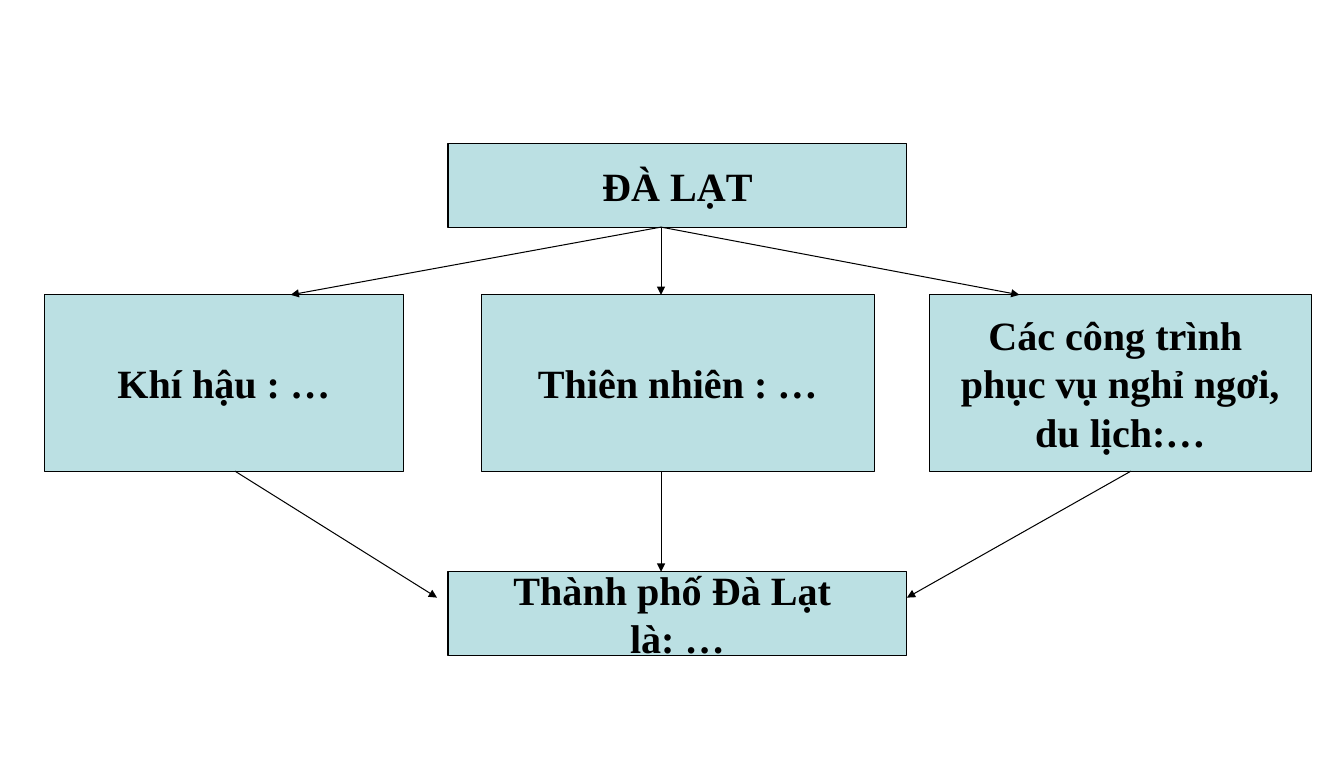
from lxml import etree
from pptx import Presentation
from pptx.dml.color import RGBColor
from pptx.enum.shapes import MSO_CONNECTOR, MSO_SHAPE
from pptx.enum.text import MSO_ANCHOR, PP_ALIGN
from pptx.oxml.ns import qn
from pptx.util import Inches, Pt

RECTANGLE = MSO_SHAPE.RECTANGLE
STRAIGHT = MSO_CONNECTOR.STRAIGHT
MIDDLE = MSO_ANCHOR.MIDDLE
CENTER = PP_ALIGN.CENTER

PALE_TEAL = RGBColor(0xBB, 0xE0, 0xE3)
BLACK = RGBColor(0, 0, 0)
LINE_WIDTH = Pt(0.75)

FRAME_FORMAT = {
    "word_wrap": False,
    "vertical_anchor": MIDDLE,
    "margin_left": Inches(0.12),
    "margin_right": Inches(0.12),
    "margin_top": Inches(0.06),
    "margin_bottom": Inches(0.06),
}
FONT_FORMAT = {"name": "Times New Roman", "size": Pt(29), "bold": True}

CITY_BOX = (4.5, 1.44, 4.61, 0.84)
FEATURE_BAND = (0.45, 2.96, 12.72, 1.77)
SUMMARY_BOX = (4.5, 5.74, 4.61, 0.84)
FEATURES = [
    (0, 3.6, ["Khí hậu : …"]),
    (4.39, 3.94, ["Thiên nhiên : …"]),
    (8.89, 3.83, ["Các công trình ", "phục vụ nghỉ ngơi,", "du lịch:…"]),
]
AXIS = 6.64
CITY_ARROW_ENDS = [2.92, AXIS, 10.24]
SUMMARY_ARROWS = [(2.36, 4.39, 0.26), (AXIS, AXIS, 0), (11.36, 9.11, 0.26)]


def apply_format(target, values):
    for name, value in values.items():
        setattr(target, name, value)


def add_box(slide, box, lines):
    shape = slide.shapes.add_shape(RECTANGLE, *map(Inches, box))
    shape.shadow.inherit = False
    shape.fill.solid()
    shape.fill.fore_color.rgb = PALE_TEAL
    shape.line.color.rgb = BLACK
    shape.line.width = LINE_WIDTH
    frame = shape.text_frame
    apply_format(frame, FRAME_FORMAT)
    for index, line in enumerate(lines):
        para = frame.add_paragraph() if index else frame.paragraphs[0]
        para.alignment = CENTER
        span = para.add_run()
        span.text = line
        apply_format(span.font, FONT_FORMAT)
        span.font.color.rgb = BLACK


def add_arrow(slide, start, end):
    arrow = slide.shapes.add_connector(STRAIGHT, *map(Inches, start + end))
    arrow.line.color.rgb = BLACK
    arrow.line.width = LINE_WIDTH
    etree.SubElement(arrow.line._get_or_add_ln(), qn("a:tailEnd"), type="triangle")
    etree.SubElement(arrow._element.spPr, qn("a:effectLst"))


def add_features(slide, band):
    left, top, _, height = band
    for offset, width, lines in FEATURES:
        add_box(slide, (left + offset, top, width, height), lines)


def add_city_arrows(slide, city, band):
    _, top, _, height = city
    for end in CITY_ARROW_ENDS:
        add_arrow(slide, (AXIS, top + height), (end, band[1]))


def add_summary_arrows(slide, band, summary):
    _, top, _, height = band
    for start, end, drop in SUMMARY_ARROWS:
        add_arrow(slide, (start, top + height), (end, summary[1] + drop))


def main():
    deck = Presentation()
    deck.slide_width = Inches(13.5)
    deck.slide_height = Inches(7.6)
    page = deck.slides.add_slide(deck.slide_layouts[6])
    add_box(page, CITY_BOX, ["ĐÀ LẠT"])
    add_features(page, FEATURE_BAND)
    add_box(page, SUMMARY_BOX, ["Thành phố Đà Lạt ", "là: …"])
    add_city_arrows(page, CITY_BOX, FEATURE_BAND)
    add_summary_arrows(page, FEATURE_BAND, SUMMARY_BOX)
    deck.save("out.pptx")


if __name__ == "__main__":
    main()
